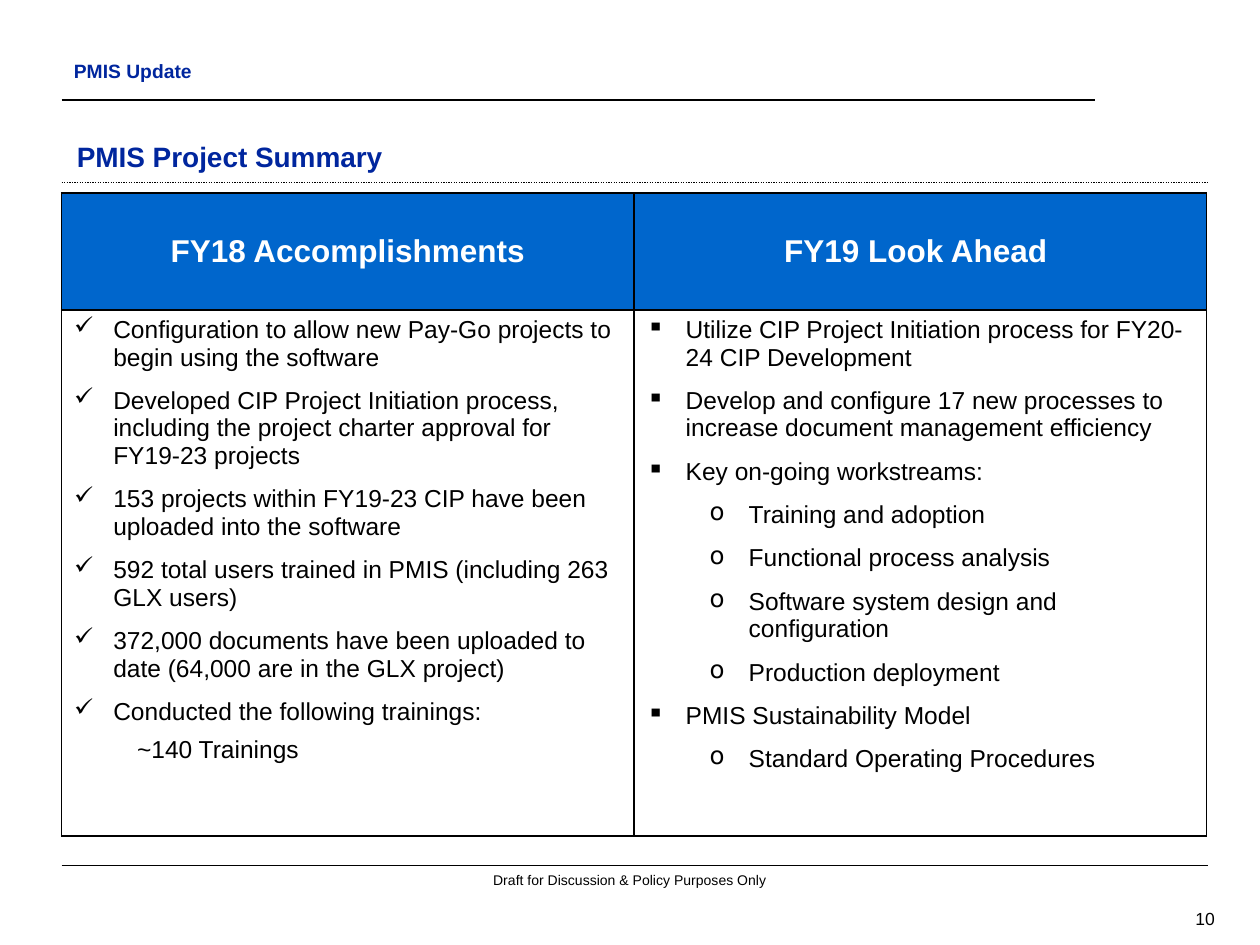
from dataclasses import dataclass

import pptx
import pptx.dml.color
import pptx.enum.dml
import pptx.enum.shapes
import pptx.enum.text
import pptx.oxml
import pptx.oxml.ns
import pptx.util
from pptx.dml.color import RGBColor
from pptx.util import Cm

ALIGN = pptx.enum.text.PP_ALIGN
ANCHOR = pptx.enum.text.MSO_ANCHOR
BLACK = RGBColor(0x00, 0x00, 0x00)
WHITE = RGBColor(0xFF, 0xFF, 0xFF)
NAVY = RGBColor(0x00, 0x26, 0x9E)
BLUE = RGBColor(0x00, 0x66, 0xCC)
FONT = "Arial"


@dataclass
class Rule:
    top: float
    right: float
    width: float
    dotted: bool = False


@dataclass
class Label:
    text: str
    left: float
    top: float
    width: float
    height: float
    size: int
    color: RGBColor = BLACK
    bold: bool = False
    align: ALIGN = ALIGN.LEFT
    anchor: ANCHOR = ANCHOR.TOP


@dataclass
class Item:
    text: str
    bullet: str = ""
    level: int = 0
    margin: float = 0.79
    space_after: int = 9


@dataclass
class Column:
    heading: str
    items: list[Item]


LEFT = 1.24
HANGING = 0.79
COLUMN_WIDTH = 11.54
ROW_HEIGHTS = (2.36, 10.6)

RULES = [
    Rule(3.68, 24.36, 0.75, dotted=True),
    Rule(17.45, 24.36, 0.75),
    Rule(2.01, 22.07, 1),
]

LABELS = [
    Label("10", 22.63, 18.19, 2.11, 0.64, 10, align=ALIGN.RIGHT, anchor=ANCHOR.MIDDLE),
    Label("Draft for Discussion & Policy Purposes Only", 9.07, 17.45, 7.26, 0.61, 8,
          align=ALIGN.CENTER),
    Label("PMIS Update", LEFT, 1.07, 20.29, 0.64, 11, NAVY, True),
    Label("PMIS Project Summary", 1.3, 2.31, 21.54, 1.3, 16, NAVY, True,
          anchor=ANCHOR.BOTTOM),
]


def check(text: str, space_after: int = 9) -> Item:
    return Item(text, "✓", space_after=space_after)


def square(text: str) -> Item:
    return Item(text, "▪")


def circle(text: str) -> Item:
    return Item(text, "o", 1, 2.06)


COLUMNS = [
    Column("FY18 Accomplishments", [
        check("Configuration to allow new Pay-Go projects to begin using the software"),
        check("Developed CIP Project Initiation process, including the project "
              "charter approval for FY19-23 projects"),
        check("153 projects within FY19-23 CIP have been uploaded into the software"),
        check("592 total users trained in PMIS (including 263 GLX users)"),
        check("372,000 documents have been uploaded to date "
              "(64,000 are in the GLX project)"),
        check("Conducted the following trainings:", 6),
        Item("~140 Trainings", level=1, margin=1.27, space_after=3),
    ]),
    Column("FY19 Look Ahead ", [
        square("Utilize CIP Project Initiation process for FY20-24 CIP Development"),
        square("Develop and configure 17 new processes to increase document "
               "management efficiency"),
        square("Key on-going workstreams:"),
        circle("Training and adoption"),
        circle("Functional process analysis"),
        circle("Software system design and configuration"),
        circle("Production deployment"),
        square("PMIS Sustainability Model"),
        circle("Standard Operating Procedures"),
    ]),
]


def format_runs(paragraph, size: int, color: RGBColor, bold: bool = False) -> None:
    for run in paragraph.runs:
        run.font.name = FONT
        run.font.size = pptx.util.Pt(size)
        run.font.bold = bold
        run.font.color.rgb = color


def add_rule(slide, rule: Rule) -> None:
    line = slide.shapes.add_connector(
        pptx.enum.shapes.MSO_CONNECTOR.STRAIGHT,
        Cm(LEFT), Cm(rule.top), Cm(rule.right), Cm(rule.top))
    line.line.color.rgb = BLACK
    line.line.width = pptx.util.Pt(rule.width)
    if rule.dotted:
        line.line.dash_style = pptx.enum.dml.MSO_LINE.ROUND_DOT
    properties = line._element.spPr
    properties.append(properties.makeelement(pptx.oxml.ns.qn("a:effectLst"), {}))


def add_label(slide, label: Label) -> None:
    shape = slide.shapes.add_textbox(
        Cm(label.left), Cm(label.top), Cm(label.width), Cm(label.height))
    frame = shape.text_frame
    frame.word_wrap = True
    frame.vertical_anchor = label.anchor
    frame.text = label.text
    paragraph = frame.paragraphs[0]
    paragraph.alignment = label.align
    format_runs(paragraph, label.size, label.color, label.bold)


def style_cell(cell, fill: RGBColor) -> None:
    # Borders come before the fill in the cell properties
    properties = cell._tc.get_or_add_tcPr()
    for side in "LRTB":
        properties.append(pptx.oxml.parse_xml(
            f'<a:ln{side} {pptx.oxml.ns.nsdecls("a")} w="{pptx.util.Pt(1)}">'
            f'<a:solidFill><a:srgbClr val="{BLACK}"/></a:solidFill></a:ln{side}>'))
    cell.fill.solid()
    cell.fill.fore_color.rgb = fill


def write_item(paragraph, item: Item) -> None:
    paragraph.text = item.text
    paragraph.level = item.level
    paragraph.space_after = pptx.util.Pt(item.space_after)
    properties = paragraph._p.get_or_add_pPr()
    properties.set("marL", str(Cm(item.margin)))
    properties.set("indent", str(-Cm(HANGING) if item.bullet else 0))
    if item.bullet:
        properties.append(properties.makeelement(
            pptx.oxml.ns.qn("a:buChar"), {"char": item.bullet}))
    format_runs(paragraph, 14, BLACK)


def add_summary_table(slide, columns: list[Column]) -> None:
    table = slide.shapes.add_table(
        len(ROW_HEIGHTS), len(columns), Cm(LEFT), Cm(3.89),
        Cm(COLUMN_WIDTH * len(columns)), Cm(sum(ROW_HEIGHTS))).table
    table.first_row = False
    table.horz_banding = False
    for row, height in zip(table.rows, ROW_HEIGHTS):
        row.height = Cm(height)
    for index, column in enumerate(columns):
        table.columns[index].width = Cm(COLUMN_WIDTH)

        heading = table.cell(0, index)
        style_cell(heading, BLUE)
        heading.vertical_anchor = ANCHOR.MIDDLE
        heading.text_frame.text = column.heading
        paragraph = heading.text_frame.paragraphs[0]
        paragraph.alignment = ALIGN.CENTER
        format_runs(paragraph, 18, WHITE, True)

        body = table.cell(1, index)
        style_cell(body, WHITE)
        frame = body.text_frame
        for number, item in enumerate(column.items):
            write_item(frame.add_paragraph() if number else frame.paragraphs[0], item)


def main() -> None:
    presentation = pptx.Presentation()
    presentation.slide_width, presentation.slide_height = Cm(25.4), Cm(19.05)
    slide = presentation.slides.add_slide(presentation.slide_layouts[6])

    # Rules, then header, title and footer texts
    for rule in RULES:
        add_rule(slide, rule)
    for label in LABELS:
        add_label(slide, label)

    # Accomplishments and look ahead
    add_summary_table(slide, COLUMNS)
    presentation.save("out.pptx")


if __name__ == "__main__":
    main()
